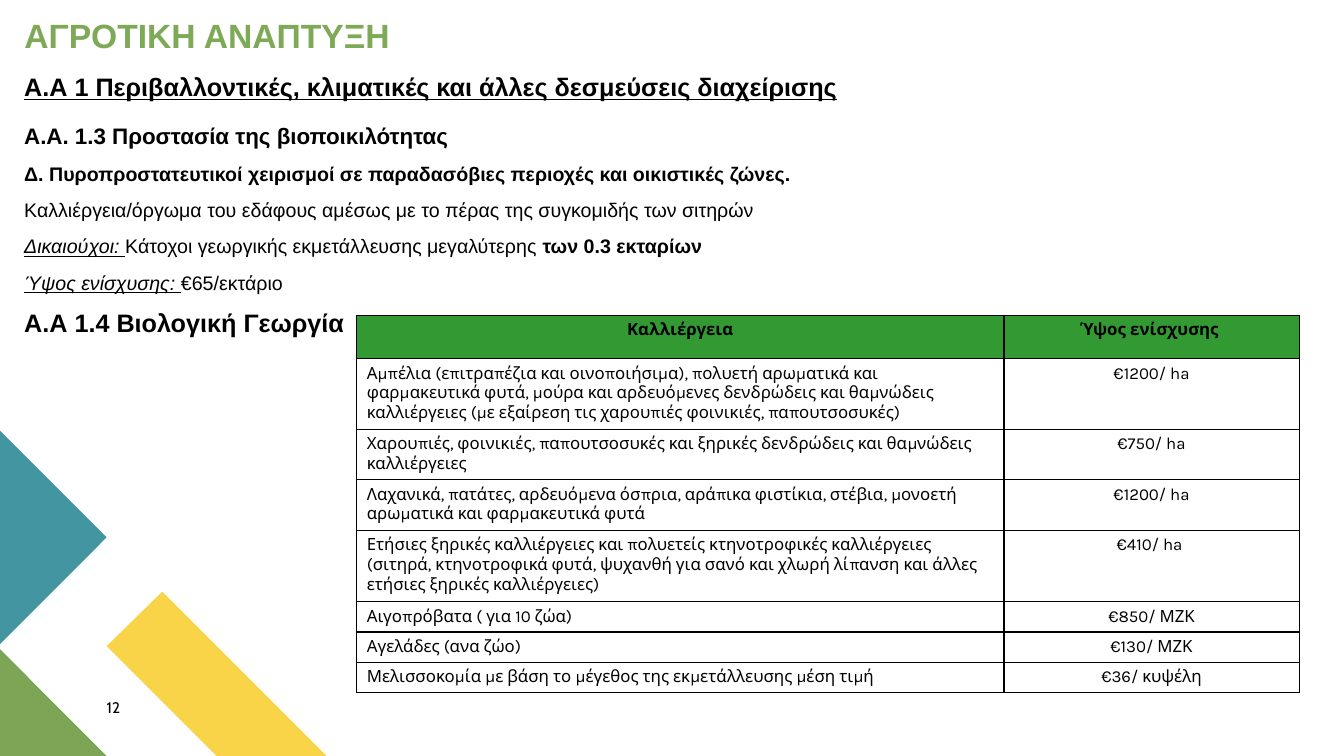
from lxml import etree
from pptx import Presentation
from pptx.dml.color import RGBColor
from pptx.enum.shapes import MSO_SHAPE
from pptx.enum.text import MSO_ANCHOR, MSO_AUTO_SIZE, PP_ALIGN
from pptx.oxml.ns import qn
from pptx.util import Cm, Pt

LEFT, CENTER = PP_ALIGN.LEFT, PP_ALIGN.CENTER
TOP = MSO_ANCHOR.TOP
FIT = MSO_AUTO_SIZE.SHAPE_TO_FIT_TEXT
RECT = MSO_SHAPE.RECTANGLE
TITLE_ONLY = 5

COLORS = {"title": "7EA957", "text": "000000", "paper": "FFFFFF", "header": "339933",
          "yellow": "F9D448", "green": "7CA655", "teal": "4495A2"}

# Content: each paragraph is a list of (text, format) runs
TITLE = [[("ΑΓΡΟΤΙΚΗ ΑΝΑΠΤΥΞΗ", {"bold": True})]]
MEASURE = [[("Α.Α 1 Περιβαλλοντικές, κλιματικές και άλλες δεσμεύσεις διαχείρισης",
             {"bold": True, "underline": True})]]
LABEL = {"italic": True, "underline": True}
DETAILS = [
    [("Α.Α. 1.3 Προστασία της βιοποικιλότητας", {"bold": True, "size": 16})],
    [("Δ. Πυροπροστατευτικοί χειρισμοί σε παραδασόβιες περιοχές και οικιστικές ζώνες.",
      {"bold": True})],
    [("Καλλιέργεια/όργωμα του εδάφους αμέσως με το πέρας της συγκομιδής των σιτηρών", {})],
    [("Δικαιούχοι: ", LABEL), ("Κάτοχοι γεωργικής εκμετάλλευσης μεγαλύτερης ", {}),
     ("των 0.3 εκταρίων", {"bold": True})],
    [("Ύψος ενίσχυσης: ", LABEL), ("€65/εκτάριο", {})],
    [("Α.Α 1.4 Βιολογική Γεωργία", {"bold": True, "size": 18})],
]
PAGE_NUMBER = [[("12", {})]]

# Row height in cm, crop, amount of aid
AID_ROWS = [
    (1.09, "Καλλιέργεια", "Ύψος ενίσχυσης "),
    (1.78, "Αμπέλια (επιτραπέζια και οινοποιήσιμα), πολυετή αρωματικά και φαρμακευτικά φυτά, "
           "μούρα και αρδευόμενες δενδρώδεις και θαμνώδεις καλλιέργειες (με εξαίρεση τις "
           "χαρουπιές φοινικιές, παπουτσοσυκές)", "€1200/ ha"),
    (1.27, "Χαρουπιές, φοινικιές, παπουτσοσυκές και ξηρικές δενδρώδεις και θαμνώδεις "
           "καλλιέργειες", "€750/ ha"),
    (1.27, "Λαχανικά, πατάτες, αρδευόμενα όσπρια, αράπικα φιστίκια, στέβια, μονοετή "
           "αρωματικά και φαρμακευτικά φυτά", "€1200/ ha"),
    (1.8, "Ετήσιες ξηρικές καλλιέργειες και πολυετείς κτηνοτροφικές καλλιέργειες (σιτηρά, "
          "κτηνοτροφικά φυτά, ψυχανθή για σανό και χλωρή λίπανση και άλλες ετήσιες ξηρικές "
          "καλλιέργειες)", "€410/ ha "),
    (0.76, "Αιγοπρόβατα ( για 10 ζώα)", "€850/ ΜΖΚ"),
    (0.76, "Αγελάδες (ανα ζώο)", "€130/ ΜΖΚ"),
    (0.76, "Μελισσοκομία με βάση το μέγεθος της εκμετάλλευσης μέση τιμή", "€36/ κυψέλη"),
]
COLUMN_WIDTHS = (16.31, 7.44)

# Corner decoration, points in cm
CORNER = [
    ("yellow", [(8.23, 19.05), (5.46, 19.05), (2.69, 16.28), (4.09, 14.91)]),
    ("green", [(2.69, 19.05), (0, 19.05), (0, 16.36)]),
    ("teal", [(0, 10.85), (2.69, 13.54), (0, 16.23)]),
]


def rgb(name):
    return RGBColor.from_string(COLORS[name])


def write(tf, paragraphs, size=14, font="Arial", color="text", align=LEFT,
          line=1.0, after=0):
    for i, runs in enumerate(paragraphs):
        p = tf.paragraphs[0] if i == 0 else tf.add_paragraph()
        p.alignment, p.line_spacing = align, line
        p.space_before, p.space_after = Pt(0), Pt(after)
        for text, style in runs:
            r = p.add_run()
            r.text = text
            r.font.name = font
            r.font.size = Pt(style.get("size", size))
            r.font.color.rgb = rgb(color)
            r.font.bold = style.get("bold", False)
            r.font.italic = style.get("italic", False)
            r.font.underline = style.get("underline", False)


def frame(sp):
    tf = sp.text_frame
    tf.word_wrap, tf.auto_size, tf.vertical_anchor = True, FIT, TOP
    return tf


def paint(sp, color):
    sp.fill.solid()
    sp.fill.fore_color.rgb = rgb(color)
    sp.line.fill.background()
    sp.shadow.inherit = False


def add_borders(cell):
    tcPr = cell._tc.get_or_add_tcPr()
    for side in ("a:lnL", "a:lnR", "a:lnT", "a:lnB"):
        ln = etree.SubElement(tcPr, qn(side), w=str(Pt(1)))
        fill = etree.SubElement(ln, qn("a:solidFill"))
        etree.SubElement(fill, qn("a:srgbClr"), val=COLORS["text"])


prs = Presentation()
prs.slide_width, prs.slide_height = Cm(33.87), Cm(19.05)
s = prs.slides.add_slide(prs.slide_layouts[TITLE_ONLY])

# Corner decoration
for color, points in CORNER:
    corners = [(Cm(x), Cm(y)) for x, y in points]
    builder = s.shapes.build_freeform(*corners[0])
    builder.add_line_segments(corners[1:], close=True)
    paint(builder.convert_to_shape(), color)

# Page number
number = s.shapes.add_textbox(Cm(2.69), Cm(17.58), Cm(1.45), Cm(0.69))
tf = number.text_frame
tf.word_wrap = True
tf.margin_left = tf.margin_top = tf.margin_right = tf.margin_bottom = 0
write(tf, PAGE_NUMBER, size=11, font="Cabin")

# Title
title = s.shapes.title
title.left, title.top, title.width, title.height = Cm(0.36), Cm(0.25), Cm(19.61), Cm(1.27)
write(frame(title), TITLE, size=24, color="title")

# Measure heading and details
for top, width, height, size, paragraphs in (
        (1.63, 30.91, 1.02, 18, MEASURE), (2.9, 32.03, 6.78, 14, DETAILS)):
    sp = s.shapes.add_shape(RECT, Cm(0.36), Cm(top), Cm(width), Cm(height))
    paint(sp, "paper")
    write(frame(sp), paragraphs, size=size, line=1.07, after=8)

# Aid table
table = s.shapes.add_table(len(AID_ROWS), len(COLUMN_WIDTHS), Cm(8.99), Cm(7.95),
                           Cm(sum(COLUMN_WIDTHS)), Cm(sum(r[0] for r in AID_ROWS))).table
table.first_row = table.horz_banding = False
for col, width in zip(table.columns, COLUMN_WIDTHS):
    col.width = Cm(width)
for i, (height, *texts) in enumerate(AID_ROWS):
    table.rows[i].height = Cm(height)
    header = i == 0
    for j, text in enumerate(texts):
        cell = table.cell(i, j)
        add_borders(cell)
        if header:
            cell.fill.solid()
            cell.fill.fore_color.rgb = rgb("header")
        else:
            cell.fill.background()
        write(cell.text_frame, [[(text, {"bold": header})]], size=12, font="Karla",
              align=CENTER if header or j else LEFT)

prs.save("out.pptx")
